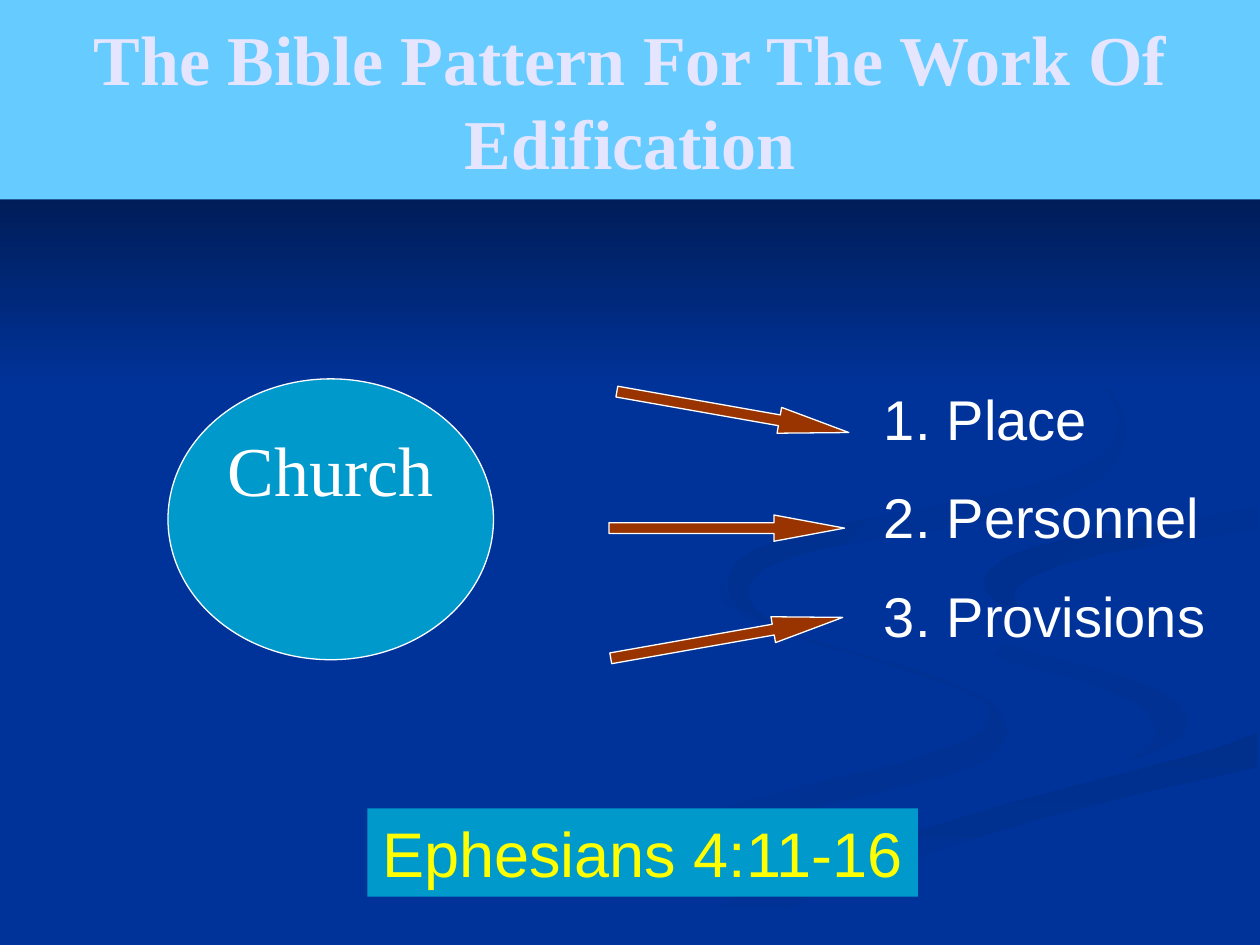
from lxml import etree
from pptx import Presentation
from pptx import util as u
from pptx.dml.color import RGBColor
from pptx.enum import shapes, text
from pptx.oxml import ns

NAVY = RGBColor(0x00, 0x33, 0x99)
NIGHT = RGBColor(0x00, 0x05, 0x14)
SHADE = RGBColor(0x00, 0x2F, 0x8C)
SOFT_SHADE = RGBColor(0x00, 0x31, 0x93)
SKY = RGBColor(0x66, 0xCC, 0xFF)
TEAL = RGBColor(0x00, 0x99, 0xCC)
RUST = RGBColor(0x99, 0x33, 0x00)
LAVENDER = RGBColor(0xE5, 0xE5, 0xFF)
YELLOW = RGBColor(0xFF, 0xFF, 0x00)
WHITE = RGBColor(0xFF, 0xFF, 0xFF)

SERIF, SANS = "Times New Roman", "Arial"
GRID = u.Pt(0.72)  # one unit of the ribbon outlines

# Ribbon outlines, each with start colour, end colour and clockwise angle
LOWER_LEFT = [
    (781, 553), (767, 547), (745, 538), (715, 528), (682, 519), (642, 507),
    (614, 496), (594, 485), (583, 477), (576, 469), (574, 464), (575, 459),
    (570, 468), (572, 476), (581, 484), (593, 491), (611, 499), (654, 513),
    (697, 525), (728, 535), (752, 543), (770, 551), (781, 556), (785, 562),
    (785, 570), (780, 579), (767, 587), (749, 594), (727, 602), (699, 609),
    (652, 620), (579, 639), (499, 661), (417, 690), (376, 707), (338, 727),
    (300, 749), (361, 749), (431, 714), (499, 687), (564, 665), (623, 647),
    (676, 634), (721, 623), (756, 614), (780, 605), (791, 597), (797, 588),
    (800, 581), (795, 567), (786, 556)]
LOWER_RIGHT = [
    (943, 570), (939, 562), (930, 553), (905, 540), (870, 530), (811, 515),
    (774, 503), (745, 490), (733, 483), (727, 474), (724, 464), (725, 474),
    (730, 484), (739, 494), (755, 505), (781, 518), (815, 530), (854, 539),
    (880, 549), (900, 557), (911, 567), (917, 576), (917, 585), (911, 593),
    (900, 601), (894, 605), (916, 597), (932, 589), (941, 581)]
BOTTOM_BAND = [
    (519, 747), (503, 749), (571, 749), (600, 733), (649, 710), (695, 692),
    (752, 672), (821, 651), (903, 630), (998, 609), (998, 581), (976, 590),
    (936, 602), (867, 620), (797, 638), (764, 647), (696, 669), (630, 693),
    (569, 719)]
MAIN_RIBBON = [
    (725, 464), (728, 474), (734, 483), (759, 498), (793, 509), (851, 524),
    (889, 535), (920, 547), (935, 557), (943, 570), (940, 583), (926, 593),
    (902, 603), (869, 611), (812, 625), (743, 643), (663, 668), (573, 703),
    (477, 749), (503, 749), (519, 747), (570, 719), (630, 693), (696, 669),
    (797, 638), (904, 610), (964, 594), (999, 581), (999, 538), (959, 531),
    (904, 519), (848, 503), (817, 492), (794, 480), (784, 469), (781, 463),
    (786, 453), (800, 442), (822, 434), (865, 424), (933, 415), (999, 402),
    (999, 387), (942, 399), (874, 408), (808, 417), (770, 427), (742, 439),
    (730, 449)]
UPPER_RIGHT = [
    (781, 460), (782, 469), (791, 478), (806, 487), (826, 496), (812, 487),
    (805, 476), (806, 468), (816, 459), (843, 448), (878, 439), (936, 429),
    (998, 420), (998, 402), (933, 415), (865, 424), (821, 434), (799, 442),
    (785, 453)]
TOP_CURL = [
    (683, 430), (739, 421), (786, 412), (825, 402), (855, 391), (876, 378),
    (889, 362), (894, 344), (890, 324), (880, 307), (864, 291), (843, 275),
    (810, 256), (780, 241), (762, 233), (805, 254), (846, 279), (870, 299),
    (885, 320), (889, 335), (882, 354), (870, 365), (852, 374), (818, 386),
    (763, 398), (676, 414), (625, 426), (597, 437), (584, 446), (577, 462),
    (580, 474), (590, 484), (604, 492), (622, 500), (607, 490), (597, 480),
    (593, 470), (596, 461), (606, 452), (624, 444), (649, 436)]
TOP_SHADE = [(0, 0), (0, 308), (1000, 308), (1000, 0)]
BACKDROP = [
    (LOWER_LEFT, NAVY, SOFT_SHADE, 0),
    (LOWER_RIGHT, NAVY, SOFT_SHADE, 45),
    (BOTTOM_BAND, SHADE, NAVY, 90),
    (MAIN_RIBBON, NAVY, NAVY, 0),
    (UPPER_RIGHT, SHADE, NAVY, 45),
    (TOP_CURL, SHADE, NAVY, 45),
    (TOP_SHADE, NIGHT, NAVY, 90),
]


def add_ribbon(slide, points, start, end, angle):
    builder = slide.shapes.build_freeform(*points[0], scale=GRID)
    builder.add_line_segments(points[1:], close=True)
    shape = builder.convert_to_shape()
    shape.shadow.inherit = False
    shape.line.fill.background()
    shape.fill.gradient()
    shape.fill.gradient_angle = -angle % 360
    for stop, color, position in zip(shape.fill.gradient_stops, (start, end), (0, 1)):
        stop.color.rgb = color
        stop.position = position


def add_block(slide, kind, box, fill, outlined=False):
    shape = slide.shapes.add_shape(kind, *map(u.Pt, box))
    shape.shadow.inherit = False
    shape.fill.solid()
    shape.fill.fore_color.rgb = fill
    if outlined:
        shape.line.color.rgb = WHITE
        shape.line.width = u.Pt(0.75)
    else:
        shape.line.fill.background()
    return shape


def add_run(paragraph, words, size, font, color, bold=False):
    run = paragraph.add_run()
    run.text = words
    run.font.size = u.Pt(size)
    run.font.name = font
    run.font.bold = bold
    run.font.color.rgb = color


def add_label(shape, words, size, font, color, anchor, wrap=False, bold=False):
    frame = shape.text_frame
    frame.word_wrap = wrap
    frame.vertical_anchor = anchor
    paragraph = frame.paragraphs[0]
    paragraph.alignment = text.PP_ALIGN.CENTER
    add_run(paragraph, words, size, font, color, bold)


def add_numbered_list(slide, box, items):
    frame = slide.shapes.add_textbox(*map(u.Pt, box)).text_frame
    frame.word_wrap = True
    for index, item in enumerate(items):
        paragraph = frame.add_paragraph() if index else frame.paragraphs[0]
        paragraph.space_before = u.Pt(18)
        add_run(paragraph, item, 32, SANS, WHITE)
        properties = paragraph._p.get_or_add_pPr()
        properties.set("marL", str(u.Pt(36)))
        properties.set("indent", str(u.Pt(-36)))
        etree.SubElement(properties, ns.qn("a:buAutoNum"), type="arabicPeriod")


def main():
    presentation = Presentation()
    presentation.slide_width, presentation.slide_height = u.Pt(720), u.Pt(540)
    slide = presentation.slides.add_slide(presentation.slide_layouts[6])
    kinds, anchors = shapes.MSO_SHAPE, text.MSO_ANCHOR

    # Backdrop
    slide.background.fill.solid()
    slide.background.fill.fore_color.rgb = NAVY
    for ribbon in BACKDROP:
        add_ribbon(slide, *ribbon)

    # Title band
    title = add_block(slide, kinds.RECTANGLE, (0, 0, 720, 114), SKY)
    add_label(title, "The Bible Pattern For The Work Of Edification", 40, SERIF,
              LAVENDER, anchors.MIDDLE, wrap=True, bold=True)

    # Arrows from the church to its provisions
    for left, top, angle in ((351.5, 228, 10), (348, 294.3, 0), (348, 357, -10)):
        arrow = add_block(slide, kinds.RIGHT_ARROW, (left, top, 134.6, 15), RUST, True)
        arrow.adjustments[0], arrow.adjustments[1] = 0.417, 2.688
        arrow.rotation = angle
    add_numbered_list(slide, (498, 216, 204, 160.5),
                      ("Place", "Personnel", "Provisions"))

    # Scripture reference
    reference = add_block(slide, kinds.RECTANGLE, (210, 462, 314.6, 50.4), TEAL)
    add_label(reference, "Ephesians 4:11-16", 36, SANS, YELLOW, anchors.TOP)

    # Church
    church = add_block(slide, kinds.OVAL, (96, 216.5, 186, 160.5), TEAL, True)
    add_label(church, "Church", 40, SERIF, WHITE, anchors.TOP)

    presentation.save("out.pptx")


if __name__ == "__main__":
    main()
